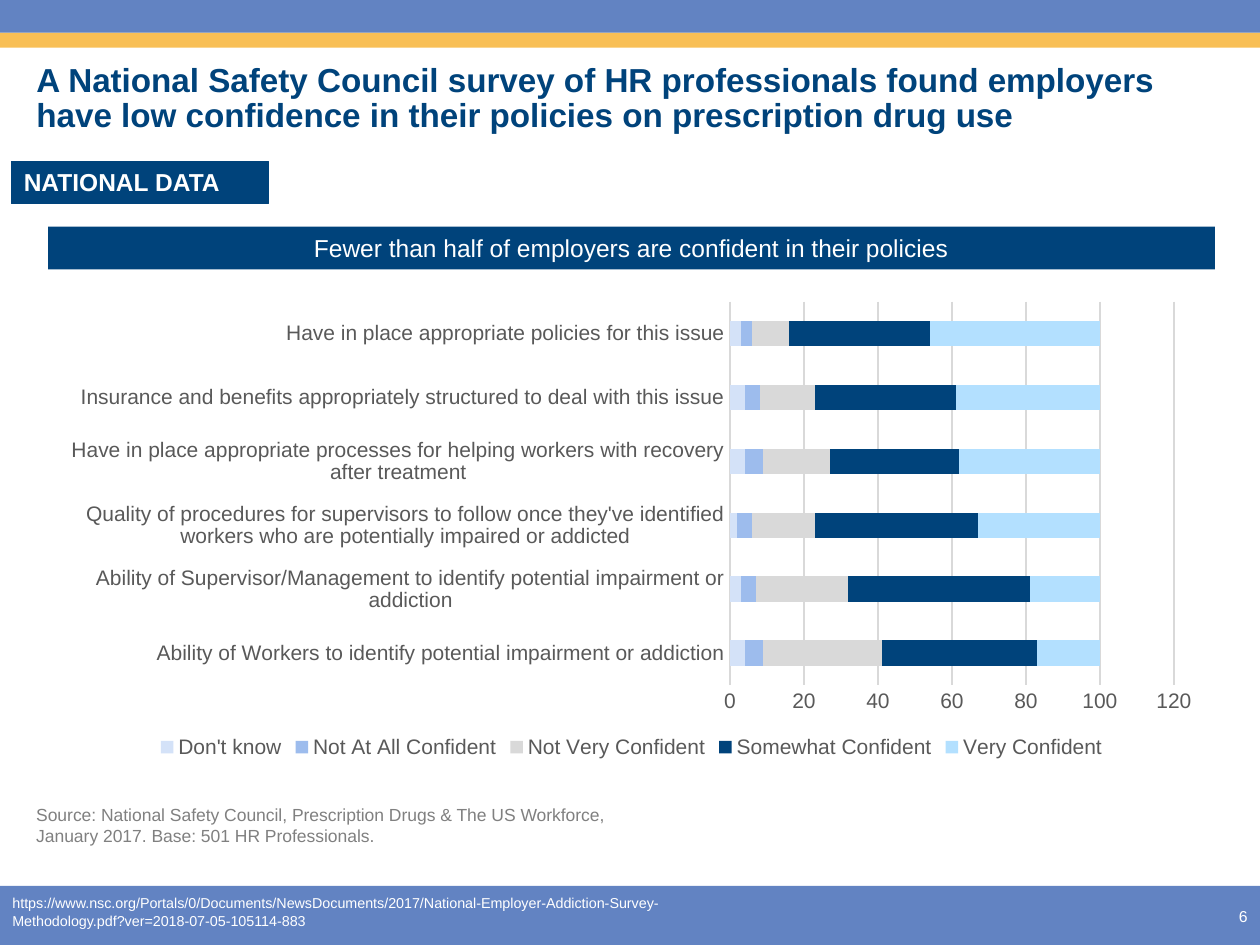
"""Build a slide on employer confidence in prescription drug policies."""
from pptx import Presentation
from pptx.chart.data import CategoryChartData
from pptx.dml.color import RGBColor
from pptx.enum.chart import XL_CHART_TYPE, XL_LEGEND_POSITION, XL_TICK_MARK
from pptx.enum.shapes import MSO_SHAPE
from pptx.enum.text import MSO_ANCHOR, MSO_AUTO_SIZE, PP_ALIGN
from pptx.util import Cm, Pt

FONT = "Arial"
NAVY = RGBColor(0x00, 0x43, 0x7B)
BLUE = RGBColor(0x62, 0x83, 0xC2)
GOLD = RGBColor(0xF8, 0xBF, 0x56)
WHITE = RGBColor(0xFF, 0xFF, 0xFF)
GRAY = RGBColor(0x80, 0x80, 0x80)
DARK_GRAY = RGBColor(0x59, 0x59, 0x59)
LIGHT_GRAY = RGBColor(0xD9, 0xD9, 0xD9)
PALE_BLUE = RGBColor(0xD4, 0xE2, 0xF8)
SOFT_BLUE = RGBColor(0x9D, 0xBC, 0xED)
SKY_BLUE = RGBColor(0xB3, 0xE0, 0xFF)

CATEGORIES = [
    "Ability of Workers to identify potential impairment or addiction",
    "Ability of Supervisor/Management to identify potential impairment or addiction",
    "Quality of procedures for supervisors to follow once they've identified "
    "workers who are potentially impaired or addicted",
    "Have in place appropriate processes for helping workers with recovery after treatment",
    "Insurance and benefits appropriately structured to deal with this issue",
    "Have in place appropriate policies for this issue",
]
SERIES = [
    ("Don't know", PALE_BLUE, (4, 3, 2, 4, 4, 3)),
    ("Not At All Confident", SOFT_BLUE, (5, 4, 4, 5, 4, 3)),
    ("Not Very Confident", LIGHT_GRAY, (32, 25, 17, 18, 15, 10)),
    ("Somewhat Confident", NAVY, (42, 49, 44, 35, 38, 38)),
    ("Very Confident", SKY_BLUE, (17, 19, 33, 38, 39, 46)),
]


def style_font(font, size, color, bold=False):
    """Apply the slide's typeface with a size, colour and weight."""
    font.name, font.size, font.bold = FONT, Pt(size), bold
    font.color.rgb = color


def write(tf, text, size=14, color=WHITE, bold=False, align=PP_ALIGN.LEFT,
          anchor=MSO_ANCHOR.TOP, spacing=None):
    """Fill a text frame with one formatted paragraph."""
    tf.word_wrap = True
    tf.auto_size = MSO_AUTO_SIZE.NONE
    tf.vertical_anchor = anchor
    p = tf.paragraphs[0]
    p.alignment, p.line_spacing = align, spacing
    r = p.add_run()
    r.text = text
    style_font(r.font, size, color, bold)


class SlideBuilder:
    """Hold the current slide and add styled elements to it."""

    def __init__(self, prs):
        self.slide = prs.slides.add_slide(prs.slide_layouts[5])

    def title(self, text, left, top, width, height):
        """Place and format the title placeholder."""
        sp = self.slide.shapes.title
        sp.left, sp.top, sp.width, sp.height = map(Cm, (left, top, width, height))
        write(sp.text_frame, text, size=19, color=NAVY, bold=True,
              anchor=MSO_ANCHOR.MIDDLE, spacing=0.9)

    def bar(self, left, top, width, height, fill, text=None, **style):
        """Add a filled rectangle, with text if given."""
        sp = self.slide.shapes.add_shape(
            MSO_SHAPE.RECTANGLE, *map(Cm, (left, top, width, height)))
        sp.shadow.inherit = False
        sp.fill.solid()
        sp.fill.fore_color.rgb = fill
        sp.line.fill.background()
        if text:
            write(sp.text_frame, text, **style)
        return sp

    def text(self, text, left, top, width, height, **style):
        """Add a text box."""
        sp = self.slide.shapes.add_textbox(*map(Cm, (left, top, width, height)))
        write(sp.text_frame, text, **style)

    def stacked_chart(self, categories, series, left, top, width, height):
        """Add a stacked bar chart with a legend below."""
        data = CategoryChartData(number_format="General")
        data.categories = categories
        for name, _, values in series:
            data.add_series(name, values)
        chart = self.slide.shapes.add_chart(
            XL_CHART_TYPE.BAR_STACKED, *map(Cm, (left, top, width, height)), data).chart
        style_font(chart.font, 12, DARK_GRAY)
        chart.has_title = False
        chart.has_legend = True
        chart.legend.position = XL_LEGEND_POSITION.BOTTOM
        chart.legend.include_in_layout = False
        style_font(chart.legend.font, 12, DARK_GRAY)

        plot = chart.plots[0]
        plot.gap_width, plot.overlap = 150, 100
        plot.vary_by_categories = False
        for ser, (_, color, _) in zip(plot.series, series):
            ser.format.fill.solid()
            ser.format.fill.fore_color.rgb = color

        cat_axis, val_axis = chart.category_axis, chart.value_axis
        for axis in (cat_axis, val_axis):
            axis.major_tick_mark = axis.minor_tick_mark = XL_TICK_MARK.NONE
            style_font(axis.tick_labels.font, 12, DARK_GRAY)
        val_axis.has_major_gridlines = True
        val_axis.format.line.fill.background()
        for line in (cat_axis.format.line, val_axis.major_gridlines.format.line):
            line.color.rgb = LIGHT_GRAY
            line.width = Pt(0.75)


def main():
    """Build and save the presentation."""
    prs = Presentation()
    prs.slide_width, prs.slide_height = Cm(25.4), Cm(19.05)
    s = SlideBuilder(prs)

    s.bar(0, 17.86, 25.4, 1.19, BLUE)
    s.bar(0, 0.66, 25.4, 0.3, GOLD)
    s.bar(0, 0, 25.4, 0.66, BLUE)
    s.text("6", 23.65, 18.16, 1.75, 0.64, size=9, align=PP_ALIGN.RIGHT)
    s.title("A National Safety Council survey of HR professionals found employers "
            "have low confidence in their policies on prescription drug use",
            0.48, 0.97, 24.33, 2.06)
    tag = s.bar(0.23, 3.25, 5.18, 0.86, NAVY, "NATIONAL DATA", bold=True)
    tag.line.color.rgb = NAVY
    tag.line.width = Pt(0.75)
    s.bar(0.97, 4.57, 23.52, 0.86, NAVY,
          "Fewer than half of employers are confident in their policies",
          align=PP_ALIGN.CENTER)
    s.stacked_chart(CATEGORIES, SERIES, 0.97, 5.89, 23.52, 9.5)
    s.text("Source: National Safety Council, Prescription Drugs & The US Workforce, "
           "January 2017. Base: 501 HR Professionals.",
           0.48, 16.08, 12.7, 1.12, size=10, color=GRAY)
    s.text("https://www.nsc.org/Portals/0/Documents/NewsDocuments/2017/"
           "National-Employer-Addiction-Survey-Methodology.pdf?ver=2018-07-05-105114-883",
           0, 17.91, 15.11, 0.97, size=8.2)

    prs.save("out.pptx")


if __name__ == "__main__":
    main()
